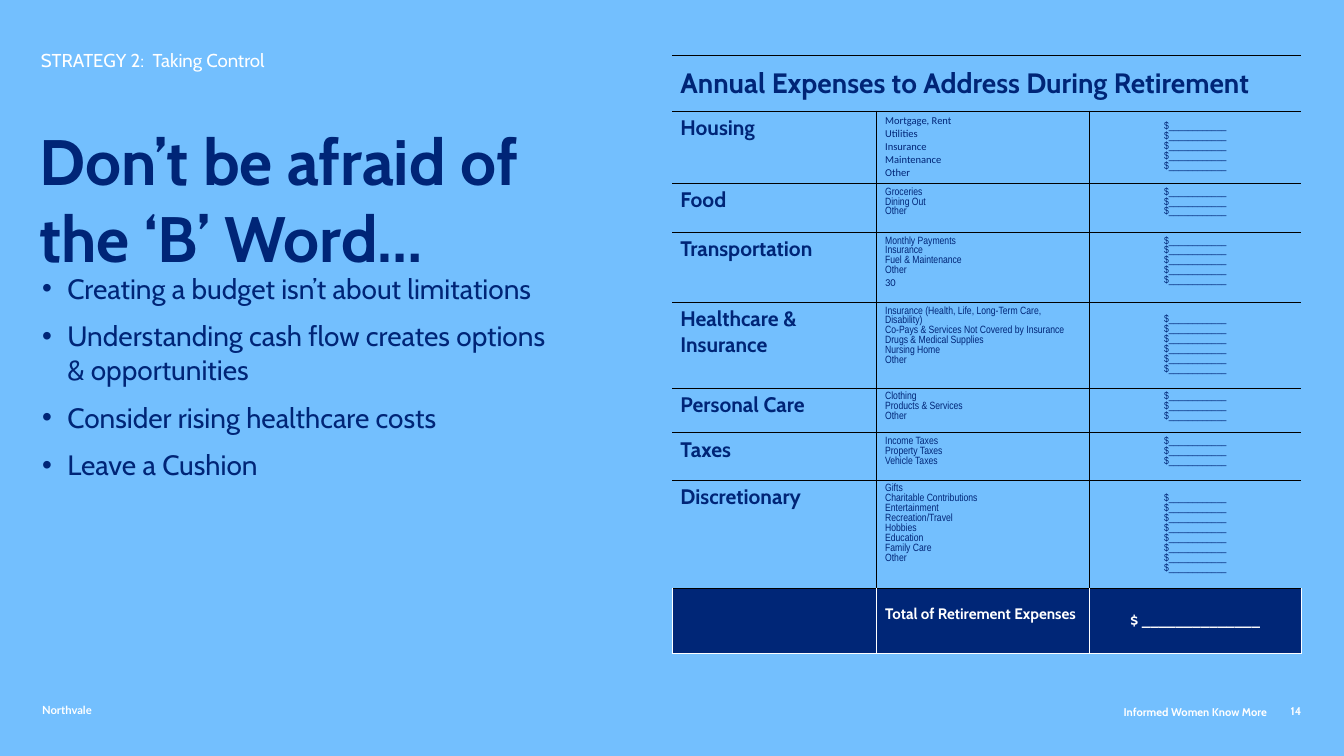
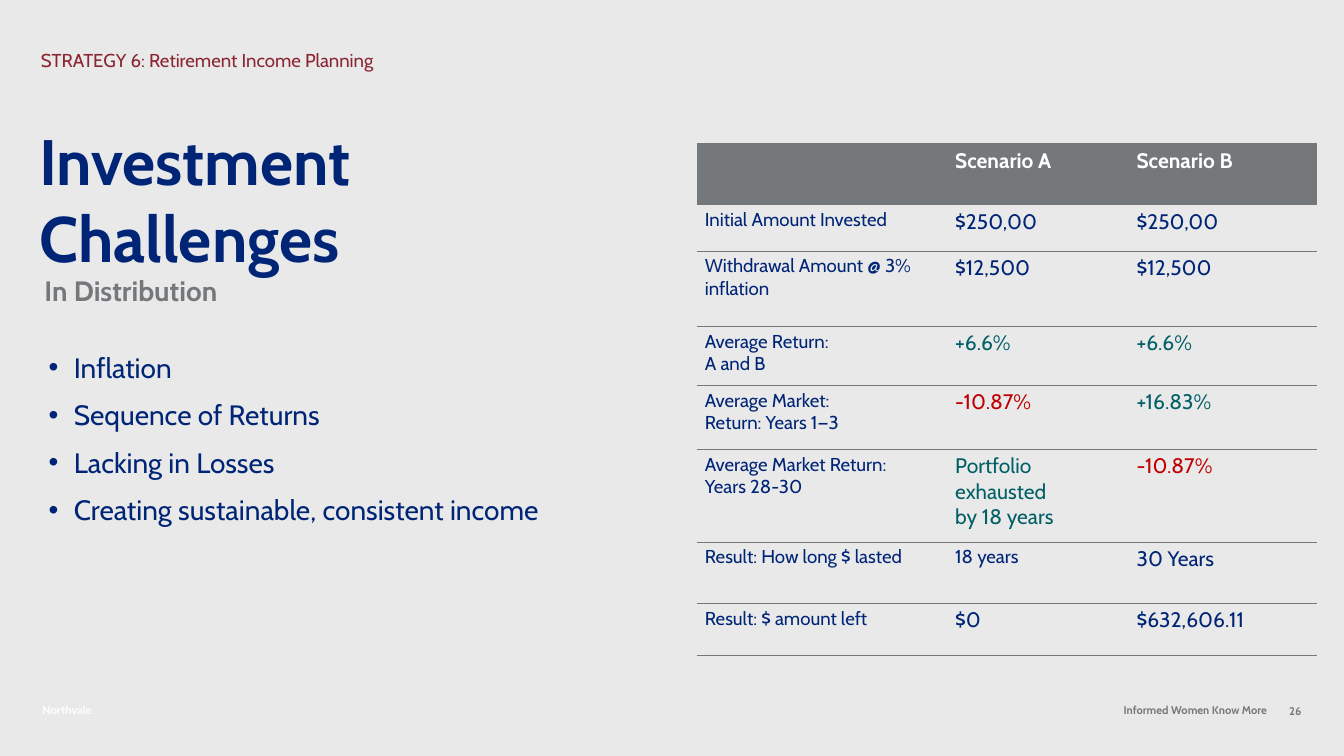
from copy import deepcopy

from lxml import etree
from pptx import Presentation
from pptx.dml.color import RGBColor
from pptx.enum.text import MSO_ANCHOR, MSO_AUTO_SIZE, PP_ALIGN
from pptx.oxml.ns import qn
from pptx.util import Pt

LEFT, MID, RIGHT = PP_ALIGN.LEFT, PP_ALIGN.CENTER, PP_ALIGN.RIGHT
TOP, CENTER, BASE = MSO_ANCHOR.TOP, MSO_ANCHOR.MIDDLE, MSO_ANCHOR.BOTTOM

# Shared colours
NAVY, DEEP, SKY, PALE = "002577", "002677", "73BFFE", "E9E9E9"
WHITE, BLACK, GRAY = "FFFFFF", "000000", "75787B"
WINE, TEAL, RED = "8C2532", "015F66", "C00000"


def rgb(code):
    return RGBColor.from_string(code)


def face(size, color=NAVY, bold=False, name="Cabin"):
    return {"name": name, "size": Pt(size), "bold": bold, "color": color}


# Shared text styles
HEAD = face(55, bold=True)
LIST = face(24)
GROUP = face(18, bold=True)
NOTE = face(9, name="Arial Narrow")
CALI = face(9, name="Calibri")
LABEL = face(16)
VALUE = face(18)


def paint(font, look):
    for key, val in look.items():
        if key == "color":
            font.color.rgb = rgb(val)
        else:
            setattr(font, key, val)


def write(frame, lines, look, align=LEFT, space=1.0, gap=0, dot=False):
    """Each line is a string, or a pair of string and own look."""
    for i, line in enumerate(lines):
        text, own = line if isinstance(line, tuple) else (line, look)
        para = frame.paragraphs[0] if i == 0 else frame.add_paragraph()
        para.text = text
        if dot:
            props = para._p.get_or_add_pPr()
            props.set("marL", str(Pt(21.6)))
            props.set("indent", str(-Pt(21.6)))
            etree.SubElement(props, qn("a:buChar")).set("char", "•")
        form = {"alignment": align, "line_spacing": space,
                "space_before": Pt(gap if i else 0)}
        for key, val in form.items():
            setattr(para, key, val)
        for run in para.runs:
            paint(run.font, own)
        for brk in para._p.findall(qn("a:br")):
            brk.insert(0, deepcopy(para.runs[0]._r.rPr))


def place(shape, box, lines, look, anchor=TOP, **form):
    sides = ("left", "top", "width", "height")
    for side, val in zip(sides, box):
        setattr(shape, side, Pt(val))
    frame = shape.text_frame
    rules = {"word_wrap": True, "auto_size": MSO_AUTO_SIZE.NONE,
             "vertical_anchor": anchor}
    for key, val in rules.items():
        setattr(frame, key, val)
    write(frame, lines, look, **form)


def label(slide, box, text, look, **form):
    shape = slide.shapes.add_textbox(*map(Pt, box))
    place(shape, box, [text], look, **form)


# Table helpers
def edge(cell, lines):
    """Draw the named sides (L, R, T, B) and clear the others."""
    props = cell._tc.get_or_add_tcPr()
    for i, side in enumerate("LRTB"):
        line = etree.Element(qn("a:ln" + side))
        if side in lines:
            color, width = lines[side]
            line.set("w", str(Pt(width)))
            fill = etree.SubElement(line, qn("a:solidFill"))
            etree.SubElement(fill, qn("a:srgbClr")).set("val", color)
        else:
            etree.SubElement(line, qn("a:noFill"))
        props.insert(i, line)


def put(cell, lines, look, rims, fill=None, anchor=TOP, **form):
    cell.vertical_anchor = anchor
    if fill:
        cell.fill.solid()
        cell.fill.fore_color.rgb = rgb(fill)
    else:
        cell.fill.background()
    edge(cell, rims)
    write(cell.text_frame, lines, look, **form)


def grid(slide, left, top, cols, rows):
    frame = slide.shapes.add_table(len(rows), len(cols), Pt(left), Pt(top),
                                   Pt(sum(cols)), Pt(sum(rows)))
    table = frame.table
    table.first_row = table.horz_banding = False
    for col, width in zip(table.columns, cols):
        col.width = Pt(width)
    for row, height in zip(table.rows, rows):
        row.height = Pt(height)
    return table


# Parts that both slides share
def base(deck, back, topic, title, items, spot, tint, mark, page, drop=0):
    slide = deck.slides.add_slide(deck.slide_layouts[1])
    slide.background.fill.solid()
    slide.background.fill.fore_color.rgb = rgb(back)
    head, body = slide.placeholders
    place(head, (26.5, 100, 513.5, 60), [title], HEAD)
    place(body, spot, items, LIST, gap=12, dot=True)
    label(slide, (28, 41, 357, 24), topic, face(16, tint), anchor=BASE,
          space=0.9)
    # Footer
    small = face(9.6, mark, True)
    label(slide, (29, 600, 178.5, 17), "Northvale",
          face(9.6, WHITE, True, "Lato"), anchor=CENTER)
    label(slide, (704, 600 + drop, 389, 17), "Informed Women Know More",
          small, anchor=CENTER, align=RIGHT)
    label(slide, (1093.5, 600, 29, 14), page, small, align=RIGHT)
    return slide


# Expense groups: name, items, blanks, row height, anchor of blanks
COSTS = [
    ("Housing", ["Mortgage, Rent", "Utilities", "Insurance", "Maintenance",
                 "Other"], 5, 62, CENTER),
    ("Food", ["Groceries", "Dining Out", "Other"], 3, 42, TOP),
    ("Transportation", ["Monthly Payments", "Insurance", "Fuel & Maintenance",
                        "Other", "30"], 5, 60, TOP),
    ("Healthcare & Insurance",
     ["Insurance (Health, Life, Long-Term Care, Disability)",
      "Co-Pays & Services Not Covered by Insurance",
      "Drugs & Medical Supplies", "Nursing Home", "Other"], 6, 73.5, CENTER),
    ("Personal Care", ["Clothing", "Products & Services", "Other"],
     3, 38.5, TOP),
    ("Taxes", ["Income Taxes", "Property Taxes", "Vehicle Taxes"],
     3, 40.5, TOP),
    ("Discretionary", ["Gifts", "Charitable Contributions", "Entertainment",
                       "Recreation/Travel", "Hobbies", "Education",
                       "Family Care", "Other"], 8, 92.5, CENTER),
]


def costs(slide, left, top):
    heights = [47.5] + [cost[3] for cost in COSTS] + [56.5]
    table = grid(slide, left, top, (175.5, 182, 182), heights)
    thin = (BLACK, 0.5)
    flat = dict.fromkeys("TB", thin)
    # Heading row
    table.cell(0, 0).merge(table.cell(0, 2))
    for col in range(3):
        text = [] if col else ["Annual Expenses to Address During Retirement"]
        put(table.cell(0, col), text, face(24, bold=True), flat,
            anchor=CENTER)
    # Groups
    for row, (name, items, count, _, anchor) in enumerate(COSTS, 1):
        lines = [(item, CALI if name == "Housing" or item == "30" else NOTE)
                 for item in items]
        put(table.cell(row, 0), [name], GROUP, flat | {"R": thin})
        put(table.cell(row, 1), lines, NOTE, dict.fromkeys("LRTB", thin))
        put(table.cell(row, 2), ["$____________"] * count, NOTE,
            flat | {"L": thin}, anchor=anchor, align=MID)
    # Total row
    rims = dict.fromkeys("LRB", (WHITE, 1)) | {"T": thin}
    total = [([], LEFT), (["Total of Retirement Expenses"], LEFT),
             (["$ ______________"], MID)]
    last = len(COSTS) + 1
    for col, (text, align) in enumerate(total):
        put(table.cell(last, col), text, face(13, WHITE, True), rims, DEEP,
            CENTER, align=align)
    table.cell(last, 1).margin_bottom = Pt(15.6)


GOOD, BAD = face(18, TEAL), face(18, RED)

# Scenario rows: height, label lines, value A, value B
CASES = [
    (39.5, ["Initial Amount Invested"], "$250,00", "$250,00"),
    (64.5, ["Withdrawal Amount @ 3% inflation"], "$12,500", "$12,500"),
    (50.5, ["Average Return: \vA and B"], ("+6.6%", GOOD), ("+6.6%", GOOD)),
    (55, ["Average Market: \vReturn: Years 1—3"], ("-10.87%", BAD),
     ("+16.83%", GOOD)),
    (79.5, ["Average Market Return:", "Years 28-30"],
     ("Portfolio exhausted \vby 18 years", GOOD), ("-10.87%", BAD)),
    (52.5, ["Result: How long $ lasted"], ("18 years", LABEL), "30 Years"),
    (44.5, ["Result: $ amount left"], "$0", "$632,606.11"),
]


def cases(slide, left, top):
    heights = [52.5] + [case[0] for case in CASES]
    table = grid(slide, left, top, (214.5, 155.5, 161.5), heights)
    for col, text in enumerate(([], ["Scenario A"], ["Scenario B"])):
        put(table.cell(0, col), text, face(18, WHITE, True), {}, GRAY)
    for row, (_, name, *pair) in enumerate(CASES, 1):
        rims = {"B": (GRAY, 0.5)}
        if row > 1:
            rims["T"] = (GRAY, 0.5)
        put(table.cell(row, 0), name, LABEL, rims)
        for col, value in enumerate(pair, 1):
            put(table.cell(row, col), [value], VALUE, rims)


def budget(deck):
    items = ["Creating a budget isn’t about limitations",
             "Understanding cash flow creates options \v& opportunities",
             "Consider rising healthcare costs", "Leave a Cushion"]
    slide = base(deck, SKY, "STRATEGY 2:  Taking Control",
                 "Don’t be afraid of the ‘B’ Word…", items,
                 (29, 229, 530, 180), WHITE, WHITE, "14", drop=2)
    costs(slide, 576, 47.5)


def income(deck):
    items = ["Inflation", "Sequence of Returns", "Lacking in Losses",
             "Creating sustainable, consistent income"]
    slide = base(deck, PALE, "STRATEGY 6: Retirement Income Planning",
                 "Investment Challenges", items,
                 (34.5, 296.5, 530, 160), WINE, GRAY, "26")
    label(slide, (31, 234.5, 530, 53), "In Distribution",
          face(24, GRAY, True), space=0.9)
    cases(slide, 597, 123)


def main():
    deck = Presentation()
    deck.slide_width, deck.slide_height = Pt(1152), Pt(648)
    budget(deck)
    income(deck)
    deck.save("out.pptx")


if __name__ == "__main__":
    main()
